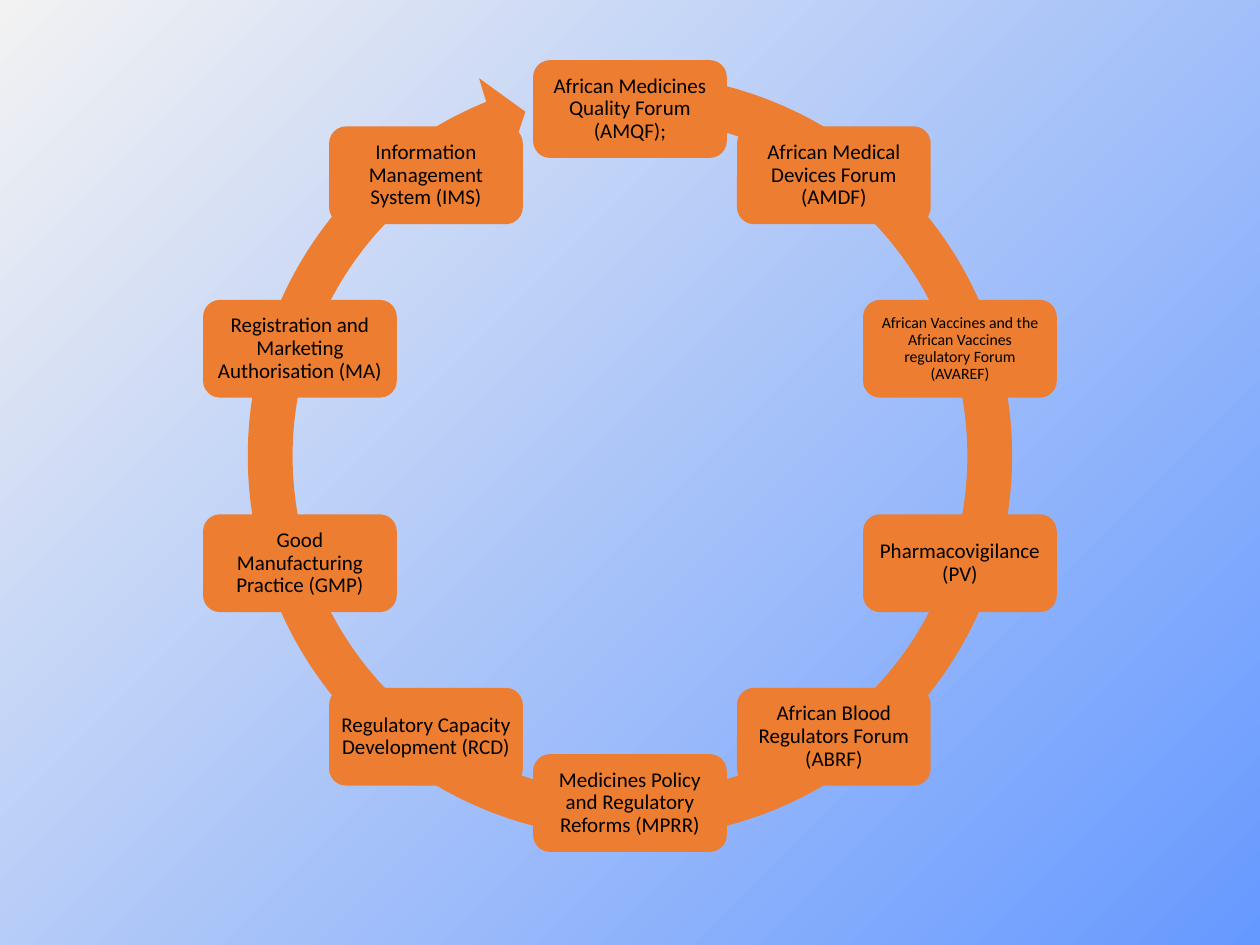
from dataclasses import dataclass
from math import cos, radians, sin

from pptx import Presentation
from pptx.dml.color import RGBColor
from pptx.enum.shapes import MSO_SHAPE
from pptx.enum.text import MSO_ANCHOR, PP_ALIGN
from pptx.util import Emu, Pt

PX_PER_INCH = 126


def px(length):
    return Emu(round(length * 914400 / PX_PER_INCH))


@dataclass(frozen=True)
class Theme:
    orange: RGBColor = RGBColor.from_string("ED7D31")
    ink: RGBColor = RGBColor.from_string("000000")
    background_start: RGBColor = RGBColor.from_string("F2F2F2")
    background_end: RGBColor = RGBColor.from_string("6699FF")
    font: str = "Calibri"
    label_size: int = 12
    small_size: int = 9


def write_text(shape, text, *, size, color, font, inset=6):
    frame = shape.text_frame
    frame.word_wrap = True
    frame.vertical_anchor = MSO_ANCHOR.MIDDLE
    frame.margin_left = frame.margin_right = px(inset)
    frame.margin_top = frame.margin_bottom = px(inset)
    paragraph = frame.paragraphs[0]
    paragraph.alignment = PP_ALIGN.CENTER
    paragraph.line_spacing = 0.9
    run = paragraph.add_run()
    run.text = text
    run.font.size = Pt(size)
    run.font.name = font
    run.font.color.rgb = color


class SlideBuilder:
    def __init__(self, slide, theme):
        self.slide = slide
        self.theme = theme

    def background(self):
        fill = self.slide.background.fill
        fill.gradient()
        fill.gradient_angle = 315
        colors = (self.theme.background_start, self.theme.background_end)
        for stop, color, position in zip(fill.gradient_stops, colors, (0, 1)):
            stop.color.rgb = color
            stop.position = position

    def solid_shape(self, kind, center_x, center_y, width, height):
        shape = self.slide.shapes.add_shape(
            kind, px(center_x - width / 2), px(center_y - height / 2), px(width), px(height))
        shape.shadow.inherit = False
        shape.fill.solid()
        shape.fill.fore_color.rgb = self.theme.orange
        return shape

    def ring_arrow(self, center_x, center_y, diameter, adjustments):
        shape = self.solid_shape(
            MSO_SHAPE.CIRCULAR_ARROW, center_x, center_y, diameter, diameter)
        shape.line.fill.background()
        for index, value in enumerate(adjustments):
            shape.adjustments[index] = value

    def step_box(self, center_x, center_y, width, height, text, size, inset):
        shape = self.solid_shape(
            MSO_SHAPE.ROUNDED_RECTANGLE, center_x, center_y, width, height)
        shape.line.color.rgb = self.theme.orange
        shape.line.width = Pt(1)
        write_text(shape, text, size=size, color=self.theme.ink,
                   font=self.theme.font, inset=inset)


# Steps, clockwise from the top
STEPS = [
    "African Medicines Quality Forum (AMQF);",
    "African Medical Devices Forum (AMDF)",
    "African Vaccines and the African Vaccines regulatory Forum (AVAREF)",
    "Pharmacovigilance (PV)",
    "African Blood Regulators Forum (ABRF)",
    "Medicines Policy and Regulatory Reforms (MPRR)",
    "Regulatory Capacity Development (RCD)",
    "Good Manufacturing Practice (GMP)",
    "Registration and Marketing Authorisation (MA)",
    "Information Management System (IMS)",
]
LONG_STEP = 2
CENTER_X, CENTER_Y = 630, 456
RADIUS = 347
RING_DIAMETER = 814
BOX_WIDTH, BOX_HEIGHT = 192, 96
# Band thickness, head angle, head end, tail start, head width
RING_ADJUSTMENTS = (0.055, 3.307, 148.553, 167.581, 0.058)


def main():
    presentation = Presentation()
    presentation.slide_width = px(1260)
    presentation.slide_height = px(945)
    theme = Theme()
    slide = presentation.slides.add_slide(presentation.slide_layouts[6])
    builder = SlideBuilder(slide, theme)

    # Background and ring
    builder.background()
    builder.ring_arrow(CENTER_X, CENTER_Y, RING_DIAMETER, RING_ADJUSTMENTS)

    # Step boxes, evenly spaced around the ring
    for index, text in enumerate(STEPS):
        angle = radians(index * 360 / len(STEPS))
        is_long = index == LONG_STEP
        builder.step_box(
            CENTER_X + RADIUS * sin(angle), CENTER_Y - RADIUS * cos(angle),
            BOX_WIDTH, BOX_HEIGHT, text,
            size=theme.small_size if is_long else theme.label_size,
            inset=5 if is_long else 6)

    presentation.save("out.pptx")


if __name__ == "__main__":
    main()
